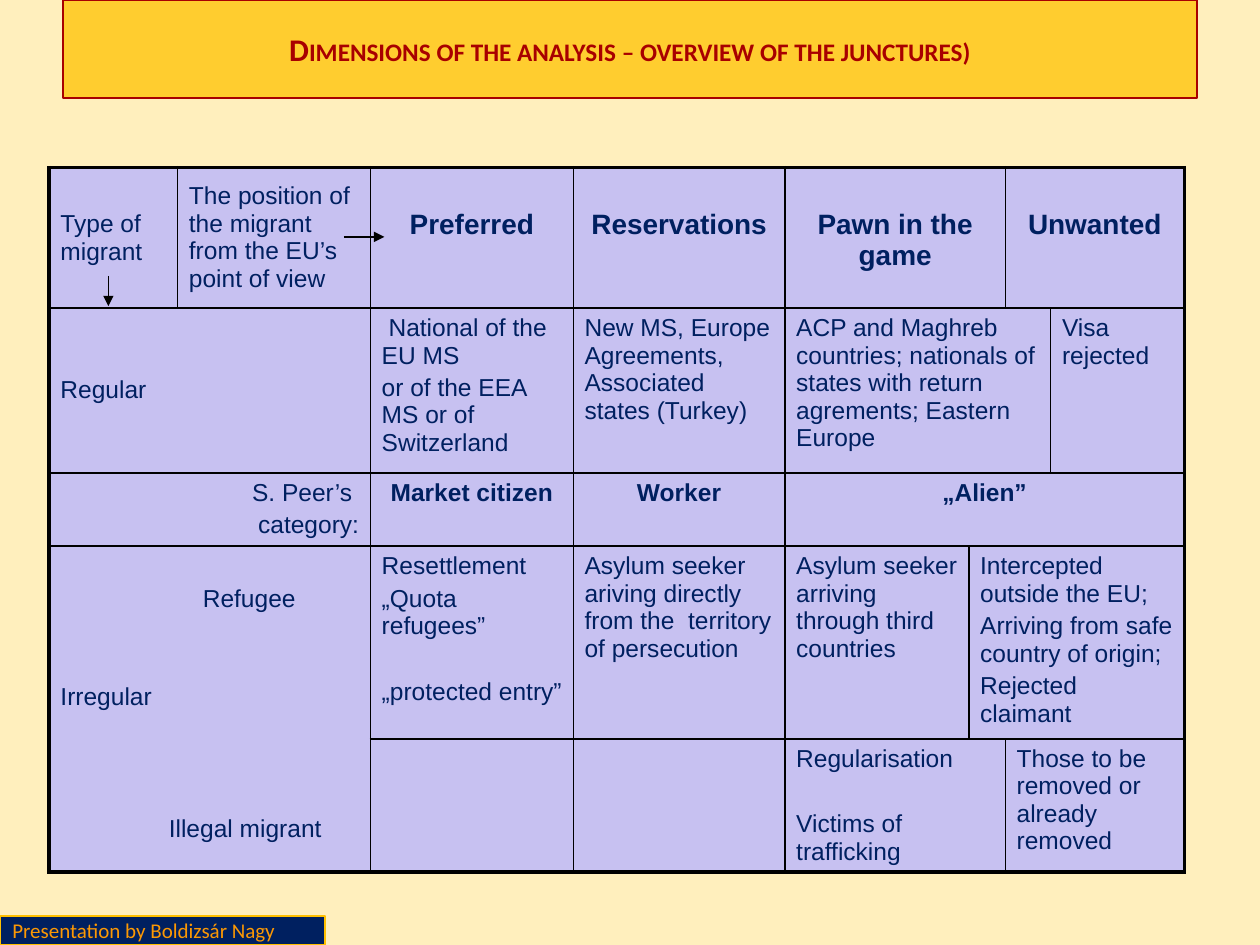
from lxml.etree import SubElement
from pptx import Presentation
from pptx.dml.color import RGBColor as RGB
from pptx.enum.shapes import MSO_CONNECTOR as LINK, MSO_SHAPE as SHAPE
from pptx.enum.text import MSO_ANCHOR as ANCHOR, PP_ALIGN as ALIGN
from pptx.oxml.ns import qn
from pptx.util import Inches, Pt

CREAM = RGB(0xFF, 0xEF, 0xBD)
GOLD = RGB(0xFF, 0xCD, 0x2F)
RED = RGB(0xA8, 0, 0)
LILAC = RGB(0xC7, 0xC1, 0xF1)
NAVY = RGB(0, 0x20, 0x60)
AMBER = RGB(0xFF, 0xC0, 0)
ORANGE = RGB(0xFC, 0x98, 0x04)
BLACK = RGB(0, 0, 0)

TITLE = "Dimensions of the analysis – overview of the junctures)"
CREDIT = "Presentation by Boldizsár Nagy"
COLS = [1.02, 1.53, 1.61, 1.68, 1.46, 0.29, 0.36, 1.06]
ROWS = [1.11, 1.31, 0.58, 1.53, 1.05]
LEFT, TOP = 0.39, 1.33
GAP = 2.8
STEP = 18.9

PLAIN = dict(size=14, bold=False, align=ALIGN.LEFT, anchor=ANCHOR.TOP, top=0.05, low=0.05)
MID = PLAIN | dict(anchor=ANCHOR.MIDDLE)
POINT = PLAIN | dict(top=0.12, low=0.12)
HEAD = PLAIN | dict(size=16, bold=True, align=ALIGN.CENTER, top=0.33, low=0.12)
ROLE = PLAIN | dict(bold=True, align=ALIGN.CENTER)
SIDE = PLAIN | dict(align=ALIGN.RIGHT)
KIND = PLAIN | dict(top=0.31)

# row, column, rows, columns, style, paragraphs as (text, blank steps, indent)
CELLS = [
    (0, 0, 1, 1, MID, ["Type of migrant"]),
    (0, 1, 1, 1, POINT, ["The position of the migrant from the EU’s point of view"]),
    (0, 2, 1, 1, HEAD, ["Preferred"]),
    (0, 3, 1, 1, HEAD, ["Reservations"]),
    (0, 4, 1, 2, HEAD, ["Pawn in the game"]),
    (0, 6, 1, 2, HEAD, ["Unwanted"]),
    (1, 0, 1, 2, MID, ["Regular"]),
    (1, 2, 1, 1, PLAIN, [" National of the EU MS", "or of the EEA  MS or of Switzerland"]),
    (1, 3, 1, 1, PLAIN, ["New MS, Europe Agreements, Associated states (Turkey)"]),
    (1, 4, 1, 3, PLAIN, ["ACP and Maghreb countries; nationals of states with return "
                         "agrements; Eastern Europe"]),
    (1, 7, 1, 1, PLAIN, ["Visa rejected"]),
    (2, 0, 1, 2, SIDE, ["S. Peer’s ", "category:"]),
    (2, 2, 1, 1, ROLE, ["Market citizen"]),
    (2, 3, 1, 1, ROLE, ["Worker"]),
    (2, 4, 1, 4, ROLE, ["„Alien”"]),
    (3, 0, 2, 2, KIND, [("Refugee", 0, 1.13), ("Irregular", 2, 0), ("Illegal migrant", 3, 0.86)]),
    (3, 2, 1, 1, PLAIN, ["Resettlement", "„Quota refugees”", ("„protected entry”", 1, 0)]),
    (3, 3, 1, 1, PLAIN, ["Asylum seeker ariving directly from the  territory of persecution"]),
    (3, 4, 1, 1, PLAIN, ["Asylum seeker arriving through third countries"]),
    (3, 5, 1, 3, PLAIN, ["Intercepted outside the EU;", "Arriving from safe country of origin;",
                         "Rejected claimant"]),
    (4, 2, 1, 1, PLAIN, []),
    (4, 3, 1, 1, PLAIN, []),
    (4, 4, 1, 2, PLAIN, ["Regularisation", ("Victims of trafficking", 1, 0)]),
    (4, 6, 1, 2, PLAIN, ["Those to be removed or already removed"]),
]
ARROWS = [(2.73, 1.88, 3.05, 1.88), (0.86, 2.19, 0.86, 2.43)]


def paint(shape, fill, line, width):
    shape.fill.solid()
    shape.fill.fore_color.rgb = fill
    shape.line.color.rgb = line
    shape.line.width = Pt(width)


def style(para, name, size, color, bold=False):
    for run in para.runs:
        font = run.font
        font.name, font.size, font.bold = name, Pt(size), bold
        font.color.rgb = color


def write(cell, look, paras):
    cell.vertical_anchor = look["anchor"]
    cell.margin_top, cell.margin_bottom = Inches(look["top"]), Inches(look["low"])
    cell.margin_left = cell.margin_right = Inches(0.09)
    frame = cell.text_frame
    items = [(p, 0, 0) if isinstance(p, str) else p for p in paras]
    frame.text = "\n".join(text for text, _, _ in items)
    for para, (_, blank, indent) in zip(frame.paragraphs, items):
        para.alignment = look["align"]
        para.space_before = Pt(GAP + blank * STEP)
        if indent:
            para._p.get_or_add_pPr().set("marL", str(Inches(indent)))
        style(para, "Arial", look["size"], NAVY, look["bold"])


def border(cell, edges):
    props = cell._tc.get_or_add_tcPr()
    for tag, outer in zip(("lnL", "lnR", "lnT", "lnB"), edges):
        line = SubElement(props, qn("a:" + tag), w=str(Pt(2.25 if outer else 1)))
        fill = SubElement(line, qn("a:solidFill"))
        SubElement(fill, qn("a:srgbClr"), val=str(BLACK))


def build_grid(slide):
    frame = slide.shapes.add_table(len(ROWS), len(COLS), Inches(LEFT), Inches(TOP),
                                   Inches(sum(COLS)), Inches(sum(ROWS)))
    table = frame.table
    table.first_row = table.horz_banding = False
    for col, width in zip(table.columns, COLS):
        col.width = Inches(width)
    for row, height in zip(table.rows, ROWS):
        row.height = Inches(height)
    for r, c, down, wide, look, paras in CELLS:
        cell = table.cell(r, c)
        if down * wide > 1:
            cell.merge(table.cell(r + down - 1, c + wide - 1))
        write(cell, look, paras)
        border(cell, (c == 0, c + wide == len(COLS), r == 0, r + down == len(ROWS)))
        cell.fill.solid()
        cell.fill.fore_color.rgb = LILAC


def main():
    deck = Presentation()
    deck.slide_width, deck.slide_height = Inches(10), Inches(7.5)
    slide = deck.slides.add_slide(deck.slide_layouts[5])
    slide.background.fill.solid()
    slide.background.fill.fore_color.rgb = CREAM

    title = slide.shapes.title
    title.left, title.top, title.width, title.height = map(Inches, (0.5, 0, 9, 0.78))
    paint(title, GOLD, RED, 1.25)
    title.text_frame.text = TITLE
    title.text_frame.vertical_anchor = ANCHOR.MIDDLE
    head = title.text_frame.paragraphs[0]
    head.alignment = ALIGN.CENTER
    style(head, "Calibri", 18, RED, True)
    head.runs[0].font._element.set("cap", "small")

    build_grid(slide)

    for ends in ARROWS:
        arrow = slide.shapes.add_connector(LINK.STRAIGHT, *map(Inches, ends))
        arrow.line.color.rgb = BLACK
        arrow.line.width = Pt(0.75)
        SubElement(arrow.line._get_or_add_ln(), qn("a:tailEnd"), type="triangle")
        SubElement(arrow._element.spPr, qn("a:effectLst"))

    credit = slide.shapes.add_shape(SHAPE.RECTANGLE, *map(Inches, (0, 7.27, 2.58, 0.23)))
    credit.shadow.inherit = False
    paint(credit, NAVY, AMBER, 0.75)
    credit.text_frame.text = CREDIT
    credit.text_frame.vertical_anchor = ANCHOR.MIDDLE
    note = credit.text_frame.paragraphs[0]
    note.alignment = ALIGN.LEFT
    style(note, "Calibri", 12, ORANGE)

    deck.save("out.pptx")


if __name__ == "__main__":
    main()
